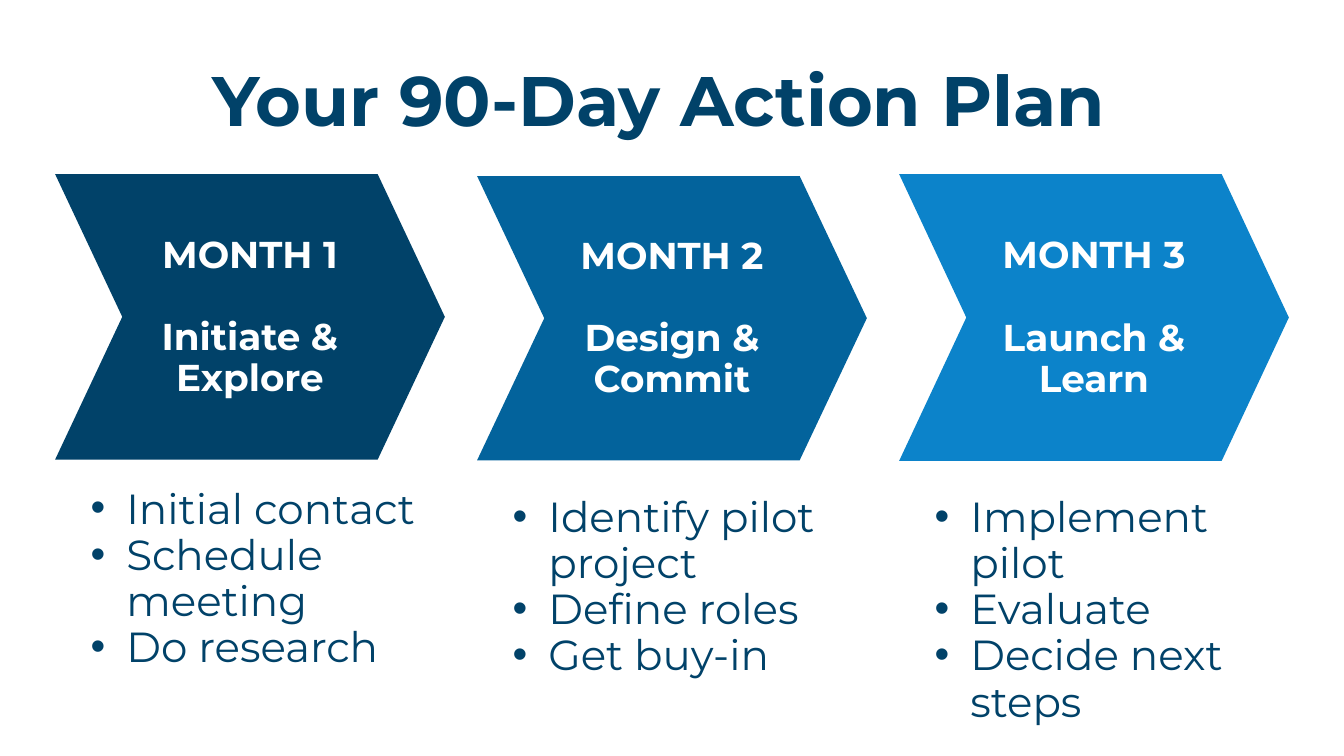
"""Build the 90-day action plan slide with three monthly chevrons and task lists."""
from dataclasses import dataclass

from lxml.etree import SubElement
from pptx import Presentation
from pptx.dml.color import RGBColor
from pptx.enum.shapes import MSO_SHAPE
from pptx.enum.text import MSO_ANCHOR, MSO_AUTO_SIZE, PP_ALIGN
from pptx.oxml.ns import qn
from pptx.slide import Slide
from pptx.text.text import TextFrame, _Paragraph
from pptx.util import Inches, Pt

NAVY = RGBColor(0x01, 0x42, 0x69)
BLUE = RGBColor(0x03, 0x63, 0x9C)
SKY = RGBColor(0x0C, 0x83, 0xCA)
WHITE = RGBColor(0xFF, 0xFF, 0xFF)

FONT = "Montserrat"
LEFT, PITCH = 0.82, 6.28
CHEVRON_W, NOTCH = 5.8, 1.0
LINE_FACTOR = 1.1

FRAME = {
    "word_wrap": True,
    "auto_size": MSO_AUTO_SIZE.NONE,
    "margin_left": 0,
    "margin_top": 0,
    "margin_right": 0,
    "margin_bottom": 0,
}


@dataclass(frozen=True)
class Style:
    size: float
    color: RGBColor
    bold: bool
    align: PP_ALIGN


@dataclass(frozen=True)
class Month:
    name: str
    goal: str
    color: RGBColor
    top: float
    height: float
    tasks: tuple[str, ...]
    tasks_top: float
    tasks_w: float
    tasks_h: float


TITLE = Style(75, NAVY, True, PP_ALIGN.CENTER)
LABEL = Style(40, WHITE, True, PP_ALIGN.CENTER)
TASK = Style(45, NAVY, False, PP_ALIGN.LEFT)

MONTHS = (
    Month("MONTH 1", "Initiate & Explore", NAVY, 2.59, 4.25,
          ("Initial contact", "Schedule meeting", "Do research"), 7.24, 5.4, 2.76),
    Month("MONTH 2", "Design & Commit", BLUE, 2.62, 4.23,
          ("Identify pilot project", "Define roles", "Get buy-in"), 7.36, 5.4, 2.76),
    Month("MONTH 3", "Launch & Learn", SKY, 2.59, 4.27,
          ("Implement pilot", "Evaluate", "Decide next steps"), 7.36, 6.13, 3.45),
)


def apply(obj: object, values: dict) -> None:
    for name, value in values.items():
        setattr(obj, name, value)


def write(tf: TextFrame, lines: tuple[str, ...], style: Style,
          anchor: MSO_ANCHOR = MSO_ANCHOR.TOP) -> None:
    apply(tf, FRAME | {"vertical_anchor": anchor})
    for i, line in enumerate(lines):
        p = tf.paragraphs[0] if i == 0 else tf.add_paragraph()
        apply(p, {"alignment": style.align, "line_spacing": Pt(style.size * LINE_FACTOR),
                  "space_before": Pt(0)})
        r = p.add_run()
        r.text = line
        apply(r.font, {"name": FONT, "size": Pt(style.size), "bold": style.bold})
        r.font.color.rgb = style.color


def add_bullet(p: _Paragraph) -> None:
    pPr = p._p.get_or_add_pPr()
    pPr.set("marL", str(Inches(1.06)))
    pPr.set("indent", str(Inches(-0.53)))
    SubElement(pPr, qn("a:buFont")).set("typeface", "Arial")
    SubElement(pPr, qn("a:buChar")).set("char", "•")


def add_chevron(s: Slide, month: Month, left: float) -> None:
    sp = s.shapes.add_shape(MSO_SHAPE.CHEVRON, Inches(left), Inches(month.top),
                            Inches(CHEVRON_W), Inches(month.height))
    sp.adjustments[0] = NOTCH / month.height
    sp.shadow.inherit = False
    sp.fill.solid()
    sp.fill.fore_color.rgb = month.color
    sp.line.fill.background()
    tf = sp.text_frame
    write(tf, (month.name, month.goal), LABEL, MSO_ANCHOR.MIDDLE)
    apply(tf, {"margin_left": Inches(0.22), "margin_right": Inches(0.22)})
    tf.paragraphs[1].space_before = Pt(LABEL.size * LINE_FACTOR)


def add_tasks(s: Slide, month: Month, left: float) -> None:
    sp = s.shapes.add_textbox(Inches(left), Inches(month.tasks_top),
                              Inches(month.tasks_w), Inches(month.tasks_h))
    write(sp.text_frame, month.tasks, TASK)
    for p in sp.text_frame.paragraphs:
        add_bullet(p)


def main() -> None:
    prs = Presentation()
    apply(prs, {"slide_width": Inches(20), "slide_height": Inches(11.25)})
    s = prs.slides.add_slide(prs.slide_layouts[5])
    title = s.shapes.title
    apply(title, {"left": Inches(1.84), "top": Inches(0.95),
                  "width": Inches(15.92), "height": Inches(1.18)})
    write(title.text_frame, ("Your 90-Day Action Plan",), TITLE)
    for i, month in enumerate(MONTHS):
        left = LEFT + i * PITCH
        add_chevron(s, month, left)
        add_tasks(s, month, left)
    prs.save("out.pptx")


if __name__ == "__main__":
    main()
